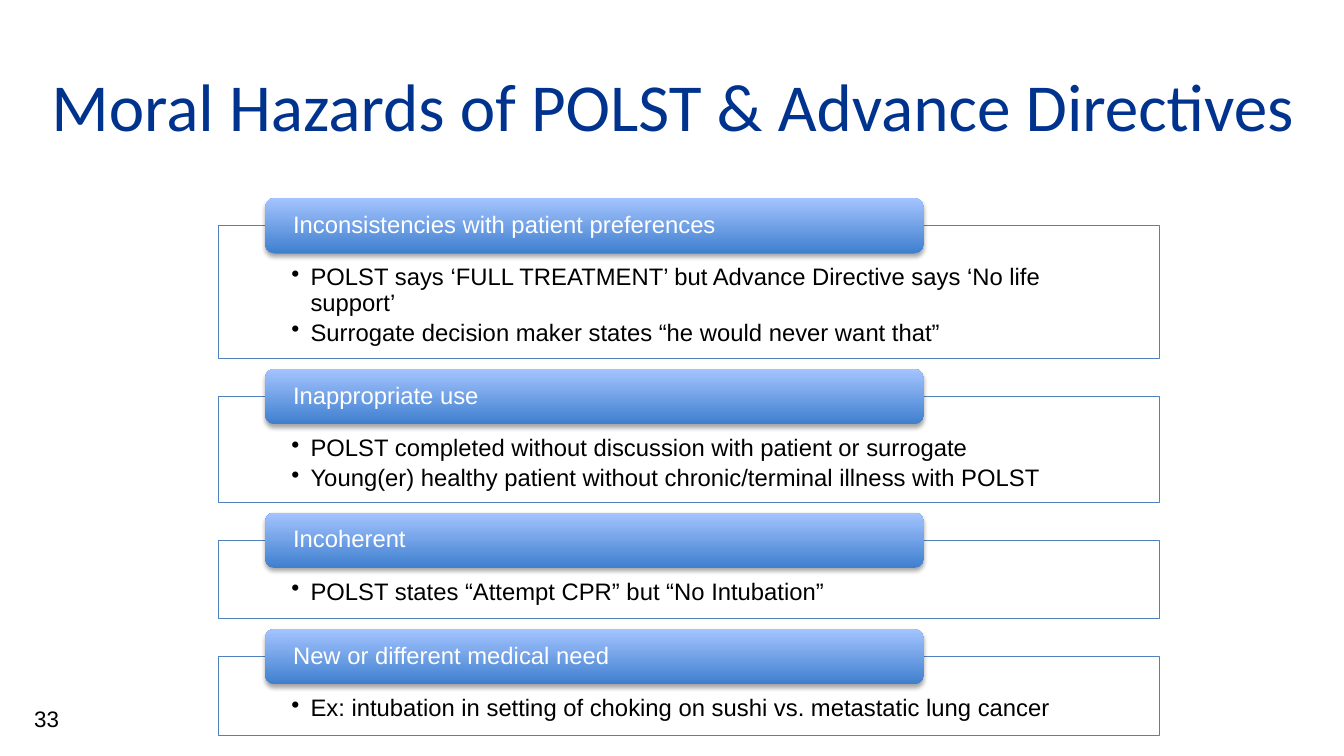
from lxml import etree
from pptx import Presentation
from pptx.dml.color import RGBColor
from pptx.enum.shapes import MSO_SHAPE
from pptx.enum.text import MSO_ANCHOR, PP_ALIGN
from pptx.oxml.ns import qn
from pptx.util import Inches, Pt

RECT, ROUNDED = MSO_SHAPE.RECTANGLE, MSO_SHAPE.ROUNDED_RECTANGLE
TOP, MIDDLE = MSO_ANCHOR.TOP, MSO_ANCHOR.MIDDLE
LEFT = PP_ALIGN.LEFT

TITLE = "Moral Hazards of POLST & Advance Directives"
PAGE = "33"
HAZARDS = [
    ("Inconsistencies with patient preferences", 1.32, [
        "POLST says ‘FULL TREATMENT’ but Advance Directive says ‘No life support’",
        "Surrogate decision maker states “he would never want that”",
    ]),
    ("Inappropriate use", 1.05, [
        "POLST completed without discussion with patient or surrogate",
        "Young(er) healthy patient without chronic/terminal illness with POLST",
    ]),
    ("Incoherent", 0.78, ["POLST states “Attempt CPR” but “No Intubation”"]),
    ("New or different medical need", 0.78, [
        "Ex: intubation in setting of choking on sushi vs. metastatic lung cancer",
    ]),
]
FIRST_TOP, GAP = 2.24, 0.375
PANEL_LEFT, PANEL_WIDTH = 2.17, 9.33
TAB_LEFT, TAB_WIDTH, TAB_HEIGHT = 2.63, 6.53, 0.55
INDENT = Inches(0.19)


def color(value):
    return RGBColor.from_string(value)


def add_child(parent, tag, **attributes):
    child = etree.SubElement(parent, qn(tag))
    for key, value in attributes.items():
        child.set(key, str(value))
    return child


def style(paragraph, size, font, ink):
    paragraph.alignment = LEFT
    paragraph.font.size = Pt(size)
    paragraph.font.name = font
    paragraph.font.color.rgb = color(ink)


def add_block(kind, box, insets, anchor):
    block = slide.shapes.add_shape(kind, *map(Inches, box))
    block.shadow.inherit = False
    frame = block.text_frame
    frame.word_wrap = True
    frame.vertical_anchor = anchor
    (frame.margin_left, frame.margin_top,
     frame.margin_right, frame.margin_bottom) = map(Inches, insets)
    return block


def add_panel(top, height, points):
    panel = add_block(RECT, (PANEL_LEFT, top, PANEL_WIDTH, height),
                      (0.72, 0.39, 0.72, 0.13), TOP)
    panel.fill.solid()
    panel.fill.fore_color.rgb = color("FFFFFF")
    fill_color = panel._element.spPr.find(qn("a:solidFill"))[0]
    add_child(fill_color, "a:alpha", val=90000)
    panel.line.color.rgb = color("4F81BD")
    panel.line.width = Pt(0.75)
    frame = panel.text_frame
    for i, point in enumerate(points):
        paragraph = frame.add_paragraph() if i else frame.paragraphs[0]
        paragraph.text = point
        properties = paragraph._p.get_or_add_pPr()
        properties.set("marL", str(INDENT))
        properties.set("indent", str(-INDENT))
        add_child(properties, "a:buChar", char="•")
        paragraph.line_spacing = 0.9
        paragraph.space_after = Pt(3)
        style(paragraph, 17, "Arial", "000000")


def add_tab(top, heading):
    tab = add_block(ROUNDED, (TAB_LEFT, top, TAB_WIDTH, TAB_HEIGHT),
                    (0.25, 0, 0.25, 0), MIDDLE)
    tab.fill.gradient()
    tab.fill.gradient_angle = 90
    for stop, (position, shade) in zip(tab.fill.gradient_stops,
                                       [(0, "3F7FCE"), (1, "A4C4FF")]):
        stop.position = position
        stop.color.rgb = color(shade)
    tab.line.fill.background()
    effects = tab._element.spPr.find(qn("a:effectLst"))
    shadow = add_child(effects, "a:outerShdw", blurRad=Pt(3.1), dist=Pt(1.8),
                       dir=5400000, rotWithShape=0)
    add_child(add_child(shadow, "a:srgbClr", val="000000"), "a:alpha", val=35000)
    paragraph = tab.text_frame.paragraphs[0]
    paragraph.text = heading
    paragraph.line_spacing = 0.9
    style(paragraph, 17, "Arial", "FFFFFF")


prs = Presentation()
prs.slide_width, prs.slide_height = Inches(13.33), Inches(7.5)
slide = prs.slides.add_slide(prs.slide_layouts[5])

title = slide.shapes.title
title.left, title.top, title.width, title.height = map(Inches, (0.41, 0.32, 12.92, 1.43))
title.text_frame.text = TITLE
title.text_frame.vertical_anchor = MIDDLE
style(title.text_frame.paragraphs[0], 48, "Calibri", "00338E")

page = slide.shapes.add_textbox(*map(Inches, (0.24, 6.95, 1.12, 0.37)))
page.text_frame.word_wrap = True
page.text_frame.text = PAGE
style(page.text_frame.paragraphs[0], 16, "Arial", "000000")

top = FIRST_TOP
for heading, height, points in HAZARDS:
    add_panel(top, height, points)
    add_tab(top - TAB_HEIGHT / 2, heading)
    top += height + GAP

prs.save("out.pptx")
